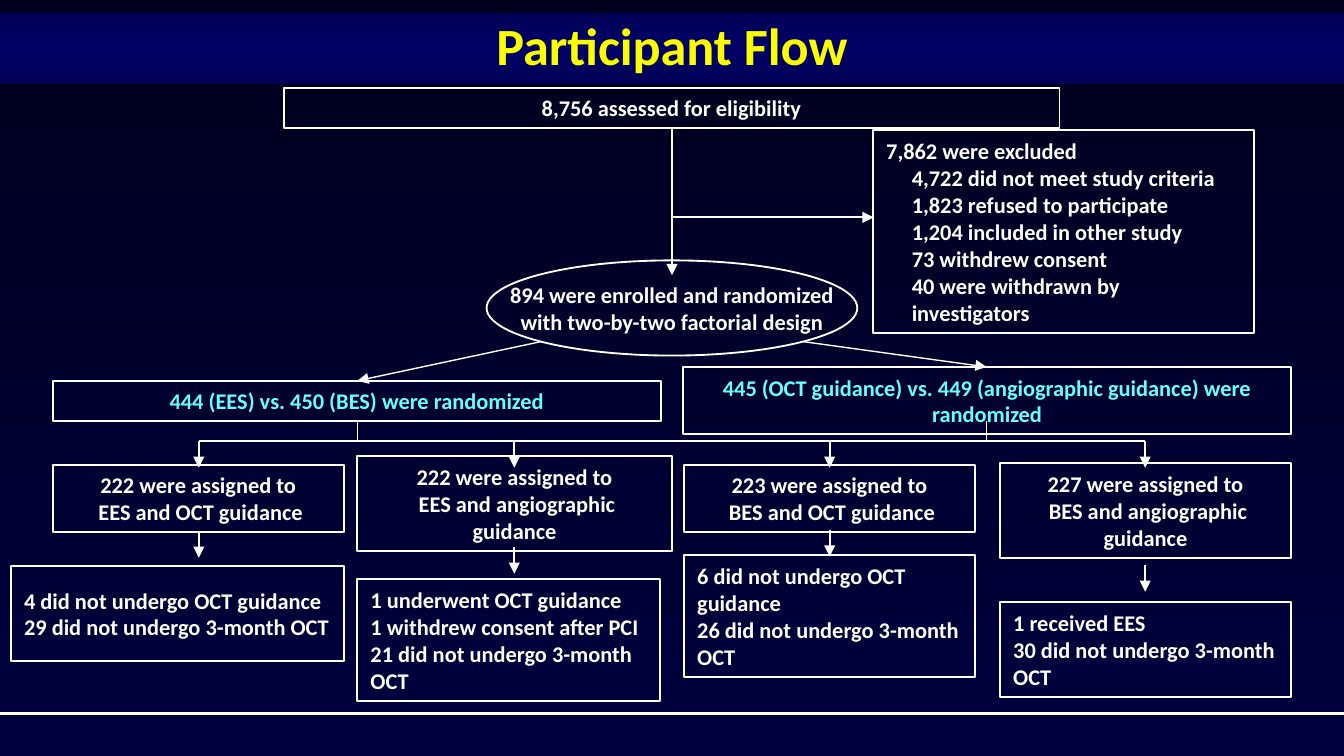
from copy import deepcopy

from pptx import Presentation
from pptx import util as u
from pptx.dml.color import RGBColor
from pptx.enum import shapes, text
from pptx.oxml import parse_xml
from pptx.oxml.ns import nsdecls

WHITE = RGBColor(0xFF, 0xFF, 0xFF)
CYAN = RGBColor(0x66, 0xFF, 0xFF)
YELLOW = RGBColor(0xFA, 0xFD, 0x00)
NIGHT = RGBColor(0x00, 0x00, 0x1D)
NAVY = RGBColor(0x00, 0x00, 0x3E)
BAND_EDGE = RGBColor(0x00, 0x00, 0x57)
BAND_CORE = RGBColor(0x00, 0x00, 0x66)

CENTER = text.PP_ALIGN.CENTER
LEFT = text.PP_ALIGN.LEFT


class FlowSlide:
    font = "Calibri"
    size = 12
    line_width = 1

    def __init__(self, slide):
        self.slide = slide

    def gradient(self, fill, owner, colors):
        fill.gradient()
        fill.gradient_angle = 270
        stop_list = owner.xpath(".//a:gsLst")[0]
        while len(stop_list) < len(colors):
            stop_list.append(deepcopy(stop_list[0]))
        for i, (stop, color) in enumerate(zip(fill.gradient_stops, colors)):
            stop.color.rgb = color
            stop.position = i / (len(colors) - 1)

    def background(self, *colors):
        self.gradient(self.slide.background.fill, self.slide._element, colors)

    def outline(self, preset, left, top, width, height):
        shape = self.slide.shapes.add_shape(
            preset, u.Pt(left), u.Pt(top), u.Pt(width), u.Pt(height))
        shape.shadow.inherit = False
        shape.fill.background()
        shape.line.color.rgb = WHITE
        shape.line.width = u.Pt(self.line_width)
        return shape

    def add_lines(self, shape, lines, align, color=WHITE, size=None, indent=0):
        frame = shape.text_frame
        frame.word_wrap = True
        frame.vertical_anchor = text.MSO_ANCHOR.MIDDLE
        frame.auto_size = text.MSO_AUTO_SIZE.SHAPE_TO_FIT_TEXT
        for i, line in enumerate(lines):
            paragraph = frame.add_paragraph() if i else frame.paragraphs[0]
            paragraph.alignment = align
            if i and indent:
                paragraph._p.get_or_add_pPr().set("marL", str(u.Pt(indent)))
            run = paragraph.add_run()
            run.text = line
            run.font.name = self.font
            run.font.size = u.Pt(size or self.size)
            run.font.bold = True
            run.font.color.rgb = color

    def box(self, place, lines, align=CENTER, color=WHITE, indent=0):
        shape = self.outline(shapes.MSO_SHAPE.RECTANGLE, *place)
        self.add_lines(shape, lines, align, color, indent=indent)

    def label(self, place, lines):
        shape = self.slide.shapes.add_textbox(*map(u.Pt, place))
        self.add_lines(shape, lines, CENTER)

    def title(self, place, words):
        band = self.outline(shapes.MSO_SHAPE.RECTANGLE, *place)
        band.line.fill.background()
        self.gradient(band.fill, band._element, [BAND_EDGE, BAND_CORE, BAND_EDGE])
        self.add_lines(band, [words], CENTER, YELLOW, 28)
        band.text_frame.paragraphs[0].line_spacing = 0.9

    def line(self, x1, y1, x2, y2, arrow=False, width=None):
        link = self.slide.shapes.add_connector(
            shapes.MSO_CONNECTOR.STRAIGHT, u.Pt(x1), u.Pt(y1), u.Pt(x2), u.Pt(y2))
        link.line.color.rgb = WHITE
        link.line.width = u.Pt(width or self.line_width)
        if arrow:
            link.line._get_or_add_ln().append(
                parse_xml(f'<a:tailEnd {nsdecls("a")} type="triangle"/>'))
        link._element.spPr.append(parse_xml(f'<a:effectLst {nsdecls("a")}/>'))


def main():
    deck = Presentation()
    deck.slide_width, deck.slide_height = u.Pt(720), u.Pt(405)
    flow = FlowSlide(deck.slides.add_slide(deck.slide_layouts[6]))
    flow.background(NIGHT, NAVY)
    flow.line(0, 382.4, 720, 382.4, width=1.75)
    flow.title((0, 7.2, 720, 37.8), "Participant Flow")

    flow.box((152, 47, 415.6, 21.6), ["8,756 assessed for eligibility"])
    flow.line(360, 69, 360, 147.4, arrow=True)
    flow.line(360, 116.5, 468, 116.5, arrow=True)
    flow.box((467.7, 69.6, 204, 109), [
        "7,862 were excluded",
        "4,722 did not meet study criteria",
        "1,823 refused to participate",
        "1,204 included in other study",
        "73 withdrew consent",
        "40 were withdrawn by investigators",
    ], LEFT, indent=13.7)

    flow.label((244, 147, 232, 36), [
        "894 were enrolled and randomized",
        "with two-by-two factorial design",
    ])
    flow.outline(shapes.MSO_SHAPE.OVAL, 260.7, 139.5, 198.6, 51)

    branch_y = 236.2
    comparisons = [
        (28.2, 204, 21.6, 290, 191.5, "444 (EES) vs. 450 (BES) were randomized"),
        (365.8, 196.6, 36, 430, 528.5,
         "445 (OCT guidance) vs. 449 (angiographic guidance) were randomized"),
    ]
    for left, top, height, source_x, stem_x, words in comparisons:
        flow.box((left, top, 326, height), [words], color=CYAN)
        flow.line(source_x, 183, stem_x, top, arrow=True, width=0.75)
        flow.line(stem_x, 225.4, stem_x, branch_y)

    first_x, step, arrow_length = 106.5, 169, 14.4
    flow.line(first_x, branch_y, first_x + 3 * step, branch_y)
    arms = [
        ((28.2, 249, 156, 36), ["222 were assigned to", " EES and OCT guidance"], 284.4,
         (5.8, 303.3, 178.6, 50.8),
         ["4 did not undergo OCT guidance", "29 did not undergo 3-month OCT"]),
        ((191.4, 244.3, 168.6, 50.8),
         ["222 were assigned to", " EES and angiographic guidance"], 293,
         (191.4, 310.2, 162, 65.4),
         ["1 underwent OCT guidance", "1 withdrew consent after PCI",
          "21 did not undergo 3-month OCT"]),
        ((366.4, 249, 156, 36), ["223 were assigned to", " BES and OCT guidance"], 283.8,
         (366.4, 297.4, 156, 65.4),
         ["6 did not undergo OCT guidance", "26 did not undergo 3-month OCT"]),
        ((535.7, 248, 156, 50.8),
         ["227 were assigned to", " BES and angiographic guidance"], 302.6,
         (535.7, 322.6, 156, 50.8),
         ["1 received EES", "30 did not undergo 3-month OCT"]),
    ]
    for i, (place, assigned, exit_y, outcome_place, outcome) in enumerate(arms):
        x = first_x + i * step
        flow.box(place, assigned)
        flow.box(outcome_place, outcome, LEFT)
        for y in (branch_y, exit_y):
            flow.line(x, y, x, y + arrow_length, arrow=True)

    deck.save("out.pptx")


if __name__ == "__main__":
    main()
